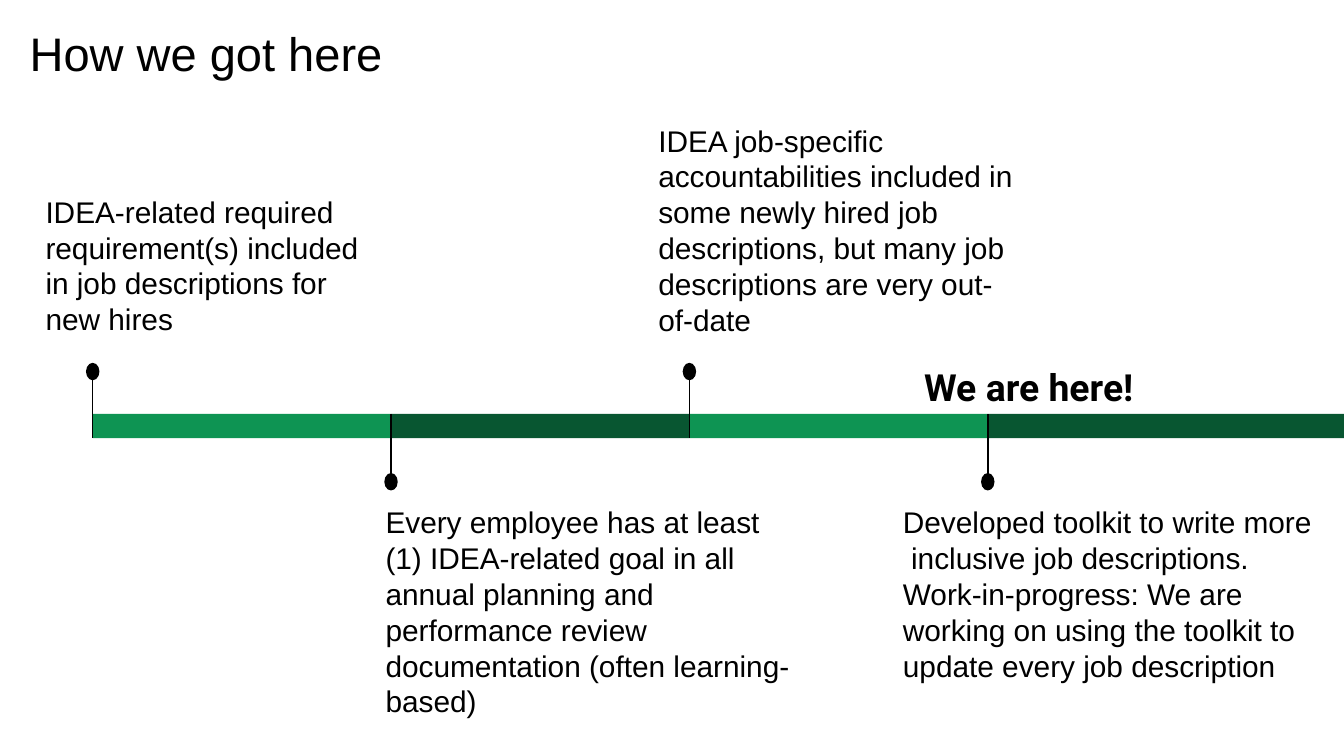
import dataclasses
import typing

import pptx
import pptx.dml.color
import pptx.enum.shapes
import pptx.enum.text
import pptx.util
from lxml import etree

SCALE = 9144  # EMU per px, 100 px to the inch
SHAPE = pptx.enum.shapes.MSO_SHAPE
ALIGN = pptx.enum.text.PP_ALIGN
ANCHOR = pptx.enum.text.MSO_ANCHOR
Box = tuple[int, int, int, int]


@dataclasses.dataclass(frozen=True)
class Theme:
    ink: str = "000000"
    light: str = "0E9453"
    dark: str = "085631"
    face: str = "Arial"
    accent: str = "Roboto"
    head: float = 25.2
    body: int = 16
    call: int = 20
    line: float = 0.75


@dataclasses.dataclass(frozen=True)
class Step:
    text: str
    box: Box
    up: bool  # marker and text above the bar


THEME = Theme()
WIDE = 1000
LEFT, PITCH = 69, 222
TOP, THICK = 308, 18
DOT_W, DOT_H = 10, 13

STEPS = [
    Step("IDEA-related required requirement(s) included in job descriptions "
         "for new hires", (24, 134, 255, 130), True),
    Step("Every employee has at least (1) IDEA-related goal in all annual "
         "planning and performance review documentation (often "
         "learning-based)", (277, 365, 325, 130), False),
    Step("IDEA job-specific accountabilities included in some newly hired job "
         "descriptions, but many job descriptions are very out- of-date",
         (480, 81, 287, 130), True),
    Step("Developed toolkit to write more\v inclusive job descriptions. "
         "Work-in-progress: We are working on using the toolkit to update "
         "every job description", (662, 365, 327, 130), False),
]


def px(*vals: int) -> list[pptx.util.Emu]:
    return [pptx.util.Emu(val * SCALE) for val in vals]


def rgb(code: str) -> pptx.dml.color.RGBColor:
    return pptx.dml.color.RGBColor.from_string(code)


def apply(item: typing.Any, form: dict[str, typing.Any]) -> None:
    for key, val in form.items():
        setattr(item, key, val)


def write(shape: typing.Any, text: str, size: float, font: dict = {},
          para: dict = {}, anchor: typing.Any = ANCHOR.TOP) -> None:
    frame = shape.text_frame
    pad = px(10)[0]
    apply(frame, {"text": text, "word_wrap": True, "vertical_anchor": anchor,
                  "auto_size": pptx.enum.text.MSO_AUTO_SIZE.NONE,
                  "margin_left": pad, "margin_right": pad,
                  "margin_top": pad, "margin_bottom": pad})
    line = frame.paragraphs[0]
    apply(line, {"alignment": ALIGN.LEFT} | para)
    for run in line.runs:
        apply(run.font, {"name": THEME.face, "size": pptx.util.Pt(size),
                         "bold": False} | font)
        run.font.color.rgb = rgb(THEME.ink)


def block(shapes: typing.Any, kind: typing.Any, box: Box, fill: str) -> None:
    shape = shapes.add_shape(kind, *px(*box))
    shape.shadow.inherit = False
    shape.fill.solid()
    shape.fill.fore_color.rgb = rgb(fill)
    shape.line.fill.background()


def stem(shapes: typing.Any, x: int, start: int, end: int) -> None:
    kind = pptx.enum.shapes.MSO_CONNECTOR.STRAIGHT
    line = shapes.add_connector(kind, *px(x, start, x, end))
    line.line.color.rgb = rgb(THEME.ink)
    line.line.width = pptx.util.Pt(THEME.line)
    etree.SubElement(line.element.spPr, pptx.oxml.ns.qn("a:effectLst"))


def draw(slide: typing.Any, rank: int, step: Step) -> None:
    shapes = slide.shapes.add_group_shape().shapes
    x = LEFT + rank * PITCH
    last = rank == len(STEPS) - 1
    # Bar segment; the last one runs to the slide edge
    width = WIDE - x if last else PITCH
    fill = THEME.dark if rank % 2 else THEME.light
    block(shapes, SHAPE.RECTANGLE, (x, TOP, width, THICK), fill)
    # Marker
    start, end = (277, TOP + THICK) if step.up else (358, TOP)
    stem(shapes, x, start, end)
    dot = 270 if step.up else 352
    block(shapes, SHAPE.OVAL, (x - DOT_W // 2, dot, DOT_W, DOT_H), THEME.ink)
    # Text
    write(shapes.add_textbox(*px(*step.box)), step.text, THEME.body,
          para={"line_spacing": 1.0})
    if last:
        write(shapes.add_textbox(*px(677, 256, 177, 51)), "We are here!",
              THEME.call, {"name": THEME.accent, "bold": True},
              {"alignment": ALIGN.CENTER, "line_spacing": 1.15})


def main() -> None:
    deck = pptx.Presentation()
    deck.slide_width = px(WIDE)[0]
    deck.slide_height = pptx.util.Emu(deck.slide_width * 9 // 16)
    slide = deck.slides.add_slide(deck.slide_layouts.get_by_name("Title Only"))

    # Title
    title = slide.shapes.title
    apply(title, dict(zip(("left", "top", "width", "height"),
                          px(12, 8, 932, 63))))
    write(title, "How we got here", THEME.head, anchor=ANCHOR.MIDDLE)

    # Timeline
    for rank, step in enumerate(STEPS):
        draw(slide, rank, step)

    deck.save("out.pptx")


if __name__ == "__main__":
    main()
